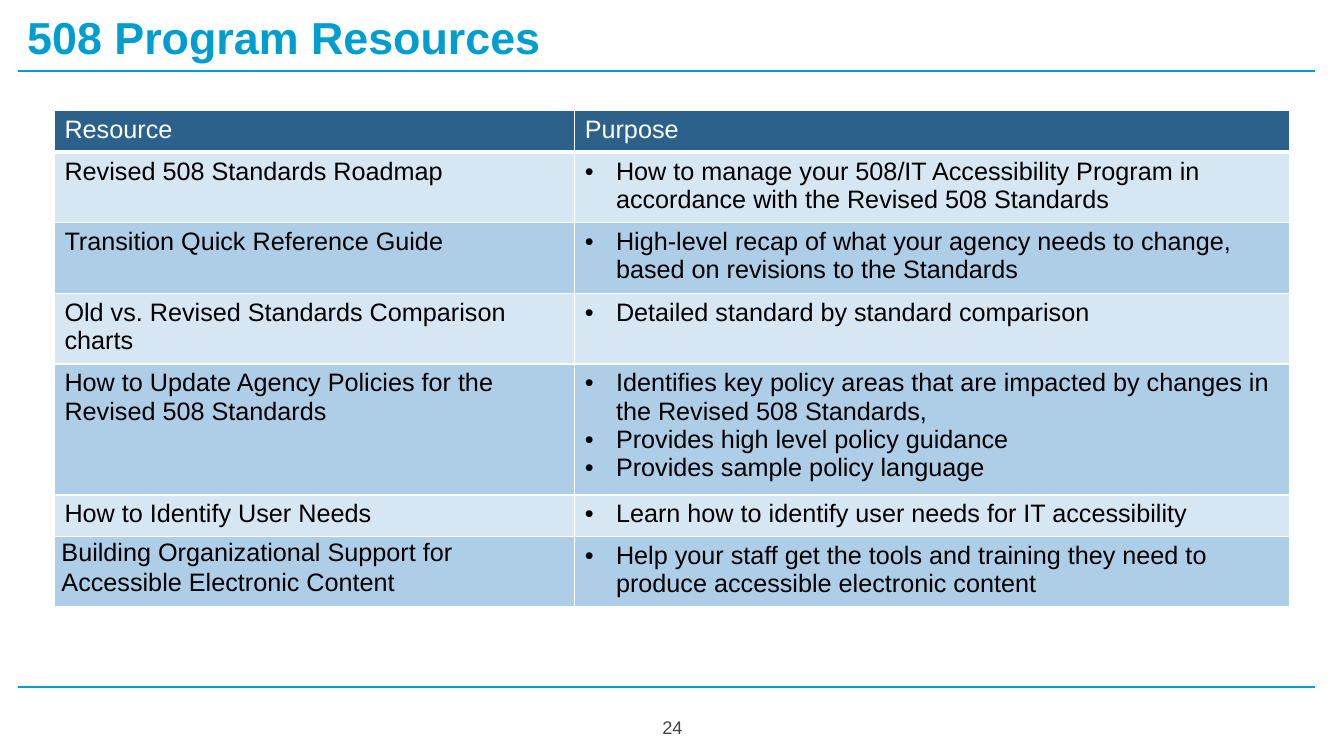
from lxml import etree
from pptx import Presentation
from pptx import util as u
from pptx.dml.color import RGBColor
from pptx.enum import shapes, text
from pptx.oxml import ns

TITLE = "508 Program Resources"
PAGE = "24"
HEAD = ("Resource", "Purpose")
ROWS = [
    ("Revised 508 Standards Roadmap",
     ["How to manage your 508/IT Accessibility Program in accordance "
      "with the Revised 508 Standards"]),
    ("Transition Quick Reference Guide",
     ["High-level recap of what your agency needs to change, "
      "based on revisions to the Standards"]),
    ("Old vs. Revised Standards Comparison charts",
     ["Detailed standard by standard comparison"]),
    ("How to Update Agency Policies for the Revised 508 Standards",
     ["Identifies key policy areas that are impacted by changes in "
      "the Revised 508 Standards,",
      "Provides high level policy guidance",
      "Provides sample policy language"]),
    ("How to Identify User Needs",
     ["Learn how to identify user needs for IT accessibility"]),
    ("Building Organizational Support for Accessible Electronic Content",
     ["Help your staff get the tools and training they need to "
      "produce accessible electronic content"]),
]
BLUE, NAVY, BLACK, WHITE, GREY = "009ECF", "2B618B", "000000", "FFFFFF", "434343"
BANDS = ("D6E6F2", "AECDE6")
COLS = (5.16, 7.09)
ROW_H = 0.41
RULES = (0.7, 6.82)


def color(code):
    return RGBColor.from_string(code)


def style(para, size, code, bold=False):
    font = para.font
    font.name, font.size, font.bold = "Arial", u.Pt(size), bold
    font.color.rgb = color(code)


def pad(frame):
    frame.margin_left = frame.margin_right = u.Inches(0.1)
    frame.margin_top = frame.margin_bottom = u.Inches(0.1)
    frame.word_wrap = True


def place(shape, left, top, width, height):
    shape.left, shape.top = u.Inches(left), u.Inches(top)
    shape.width, shape.height = u.Inches(width), u.Inches(height)


def bullet(para):
    props = para._p.get_or_add_pPr()
    props.set("marL", str(u.Inches(0.31)))
    props.set("indent", str(-u.Inches(0.31)))
    tint = etree.SubElement(props, ns.qn("a:buClr"))
    etree.SubElement(tint, ns.qn("a:srgbClr"), val=BLACK)
    etree.SubElement(props, ns.qn("a:buFont"), typeface="Arial")
    etree.SubElement(props, ns.qn("a:buChar"), char="•")


def border(cell, base):
    """Draw white cell borders, with the bottom one base points wide."""
    props = cell._tc.get_or_add_tcPr()
    for i, (side, width) in enumerate(zip("LRTB", (1, 1, 1, base))):
        line = etree.Element(ns.qn("a:ln" + side), w=str(u.Pt(width)))
        fill = etree.SubElement(line, ns.qn("a:solidFill"))
        etree.SubElement(fill, ns.qn("a:srgbClr"), val=WHITE)
        props.insert(i, line)


def write(cell, lines, ink, back, base=1, marks=False):
    cell.fill.solid()
    cell.fill.fore_color.rgb = color(back)
    border(cell, base)
    cell.text = "\n".join(lines)
    for para in cell.text_frame.paragraphs:
        if marks:
            bullet(para)
        style(para, 18, ink)


def rule(slide, y):
    line = slide.shapes.add_connector(
        shapes.MSO_CONNECTOR.STRAIGHT,
        u.Inches(0.18), u.Inches(y), u.Inches(13.04), u.Inches(y))
    line.line.color.rgb = color(BLUE)
    line.line.width = u.Pt(1.5)
    etree.SubElement(line._element.spPr, ns.qn("a:effectLst"))


def grid(slide):
    count = len(ROWS) + 1
    table = slide.shapes.add_table(
        count, len(COLS), u.Inches(0.54), u.Inches(1.1),
        u.Inches(sum(COLS)), u.Inches(ROW_H * count)).table
    for col, width in zip(table.columns, COLS):
        col.width = u.Inches(width)
    for row in table.rows:
        row.height = u.Inches(ROW_H)
    for c, label in enumerate(HEAD):
        write(table.cell(0, c), [label], WHITE, NAVY, base=3)
    for r, (name, goals) in enumerate(ROWS, 1):
        back = BANDS[(r - 1) % 2]
        write(table.cell(r, 0), [name], BLACK, back)
        write(table.cell(r, 1), goals, BLACK, back, marks=True)
    last = table.cell(count - 1, 0)
    last.margin_left = last.margin_right = u.Inches(0.07)
    last.margin_top = last.margin_bottom = 0
    last.text_frame.paragraphs[0].line_spacing = 1.07


def main():
    deck = Presentation()
    deck.slide_width, deck.slide_height = u.Inches(13.33), u.Inches(7.5)
    slide = deck.slides.add_slide(deck.slide_layouts[5])
    for y in RULES:
        rule(slide, y)

    title = slide.shapes.title
    place(title, 0.17, 0, 9.78, 0.7)
    frame = title.text_frame
    frame.text = TITLE
    pad(frame)
    frame.auto_size = text.MSO_AUTO_SIZE.NONE
    frame.vertical_anchor = text.MSO_ANCHOR.TOP
    frame.paragraphs[0].alignment = text.PP_ALIGN.LEFT
    style(frame.paragraphs[0], 32, BLUE, True)

    box = slide.shapes.add_textbox(0, 0, 0, 0)
    place(box, 6.37, 6.93, 0.6, 0.57)
    frame = box.text_frame
    frame.text = PAGE
    pad(frame)
    frame.vertical_anchor = text.MSO_ANCHOR.MIDDLE
    frame.paragraphs[0].alignment = text.PP_ALIGN.CENTER
    style(frame.paragraphs[0], 13, GREY)

    grid(slide)
    deck.save("out.pptx")


if __name__ == "__main__":
    main()
